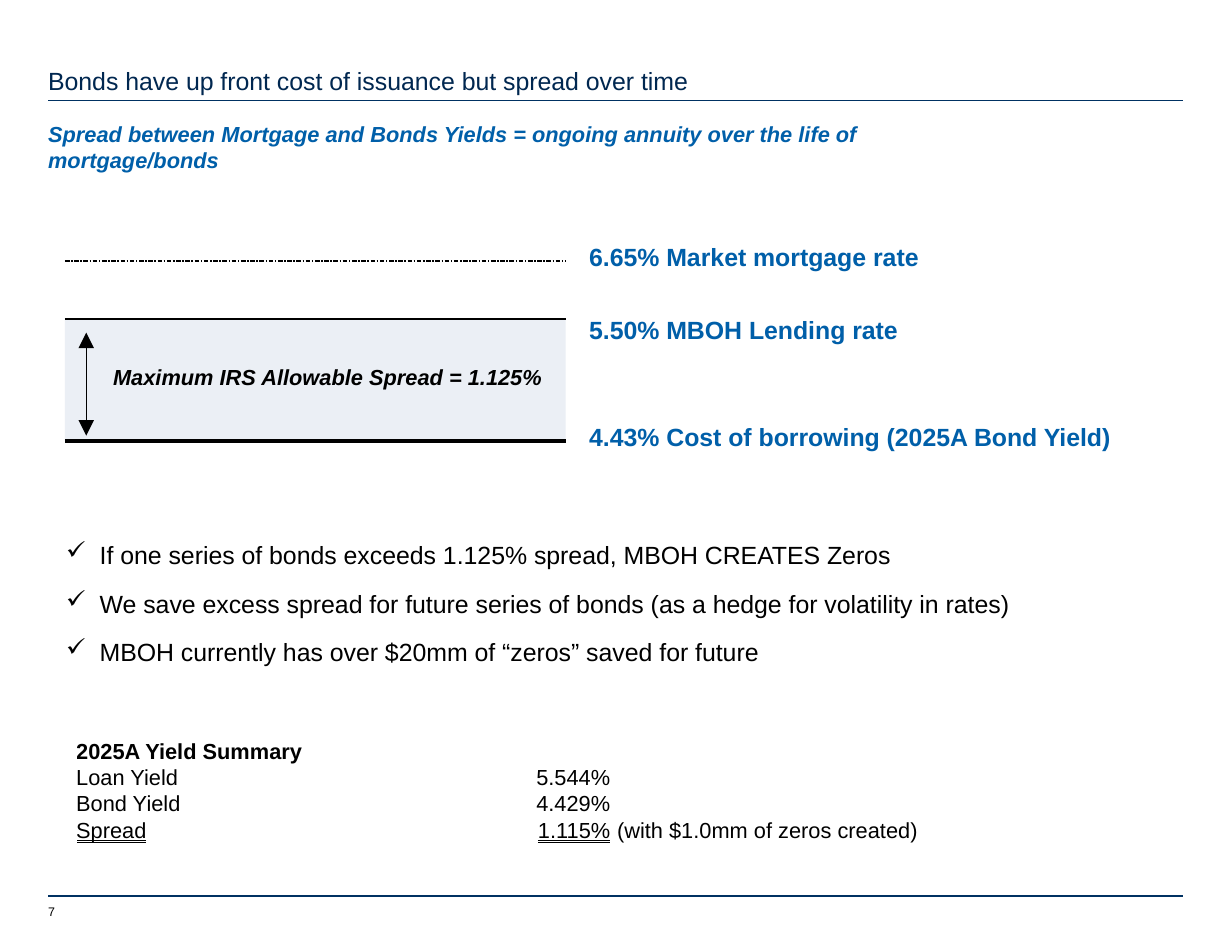
from dataclasses import dataclass

from lxml.etree import SubElement
from pptx import Presentation
from pptx.dml.color import RGBColor
from pptx.enum.shapes import MSO_CONNECTOR, MSO_SHAPE
from pptx.enum.text import MSO_ANCHOR, MSO_UNDERLINE, PP_ALIGN
from pptx.oxml.ns import qn
from pptx.util import Inches, Pt

COLUMNS, ROWS = 110, 85
UNIT = Inches(11) // COLUMNS


@dataclass(frozen=True)
class Theme:
    font: str = "Arial"
    title: str = "002750"
    accent: str = "005FA9"
    rule: str = "003162"
    ink: str = "000000"
    band: str = "EBEFF5"
    large: int = 16
    medium: int = 14
    small: int = 8


THEME = Theme()


@dataclass(frozen=True)
class Box:
    """A region measured in columns and rows of the page grid."""
    left: float
    top: float
    width: float
    height: float

    def inner(self, left, top, width, height):
        return Box(self.left + left, self.top + top, width, height)

    def emu(self):
        return [round(n * UNIT) for n in (self.left, self.top, self.width, self.height)]


def style(para, size, color=THEME.ink, bold=False, italic=False):
    font = para.font
    font.name, font.size = THEME.font, Pt(size)
    font.bold, font.italic = bold, italic
    font.color.rgb = RGBColor.from_string(color)


def add_frame(page, box):
    frame = page.shapes.add_textbox(*box.emu()).text_frame
    frame.word_wrap = True
    frame.margin_left = frame.margin_right = frame.margin_top = frame.margin_bottom = 0
    return frame


def add_label(page, box, text, size, color=THEME.ink, **weight):
    frame = add_frame(page, box)
    frame.vertical_anchor = MSO_ANCHOR.MIDDLE
    para = frame.paragraphs[0]
    para.text = text
    style(para, size, color, **weight)


def add_line(page, box, color=THEME.ink, width=0.75, dash=None, arrows=False):
    left, top, across, down = box.emu()
    line = page.shapes.add_connector(
        MSO_CONNECTOR.STRAIGHT, left, top, left + across, top + down)
    line.line.color.rgb = RGBColor.from_string(color)
    line.line.width = Pt(width)
    properties = line._element.spPr
    outline = properties.find(qn("a:ln"))
    if dash:
        SubElement(outline, qn("a:prstDash"), val=dash)
    if arrows:
        for end in ("a:headEnd", "a:tailEnd"):
            SubElement(outline, qn(end), type="triangle", w="lg", len="lg")
    SubElement(properties, qn("a:effectLst"))


def add_header(page, box):
    add_label(page, box.inner(0, 0, 88, 2.6),
              "Bonds have up front cost of issuance but spread over time",
              THEME.large, THEME.title)
    add_line(page, box.inner(0, 3.1, box.width, 0), THEME.rule)
    add_label(page, box.inner(0, 4.9, 86, 4.6),
              "Spread between Mortgage and Bonds Yields = ongoing annuity "
              "over the life of mortgage/bonds",
              THEME.medium, THEME.accent, bold=True, italic=True)


def add_rates(page, box):
    """Rate levels on the left, with the allowable spread as a band between two."""
    reach, lending, borrowing = 44.7, 5.15, 16.1
    band = page.shapes.add_shape(
        MSO_SHAPE.RECTANGLE,
        *box.inner(0, lending, reach, borrowing - lending).emu())
    band.shadow.inherit = False
    band.fill.solid()
    band.fill.fore_color.rgb = RGBColor.from_string(THEME.band)
    band.line.fill.background()

    for row, width, dash in ((0, 1, "sysDashDot"), (lending, 1.25, None),
                             (borrowing, 2.5, None)):
        add_line(page, box.inner(0, row, reach, 0), width=width, dash=dash)
    add_line(page, box.inner(1.9, 6.4, 0, 9.2), arrows=True)

    add_label(page, box.inner(4.3, 9.1, 40, 2.4), "Maximum IRS Allowable Spread = 1.125%",
              THEME.medium, bold=True, italic=True)
    for middle, text in ((-0.4, "6.65% Market mortgage rate"),
                         (6.1, "5.50% MBOH Lending rate"),
                         (15.7, "4.43% Cost of borrowing (2025A Bond Yield)")):
        add_label(page, box.inner(46.8, middle - 1.3, box.width - 46.8, 2.6), text,
                  THEME.large, THEME.accent, bold=True)


def add_points(page, box):
    frame = add_frame(page, box)
    points = ("If one series of bonds exceeds 1.125% spread, MBOH CREATES Zeros",
              "We save excess spread for future series of bonds "
              "(as a hedge for volatility in rates)",
              "MBOH currently has over $20mm of “zeros” saved for future")
    for index, text in enumerate(points):
        para = frame.add_paragraph() if index else frame.paragraphs[0]
        para.text = text
        properties = para._p.get_or_add_pPr()
        properties.set("marL", str(3 * UNIT))
        properties.set("indent", str(-3 * UNIT))
        para.space_before = Pt(12 if index else 0)
        SubElement(properties, qn("a:buChar"), char="✓")
        style(para, THEME.large)


def add_bottom_border(cell):
    properties = cell._tc.get_or_add_tcPr()
    border = SubElement(properties, qn("a:lnB"), w=str(Pt(0.5)))
    fill = SubElement(border, qn("a:solidFill"))
    SubElement(fill, qn("a:srgbClr"), val=THEME.ink)


def add_summary(page, box):
    rows = (("2025A Yield Summary", "", ""),
            ("Loan Yield", "5.544%", ""),
            ("Bond Yield", "4.429%", ""),
            ("Spread", "1.115%", "(with $1.0mm of zeros created)"))
    table = page.shapes.add_table(len(rows), 3, *box.emu()).table
    table.first_row = table.horz_banding = False
    for column, width in zip(table.columns, (30.5, 17.2, 27.7)):
        column.width = round(width * UNIT)
    for row_index, texts in enumerate(rows):
        for column_index, text in enumerate(texts):
            cell = table.cell(row_index, column_index)
            cell.margin_left = cell.margin_right = 0
            cell.margin_top = cell.margin_bottom = 0
            if column_index == 2:
                cell.margin_left = round(0.6 * UNIT)
            para = cell.text_frame.paragraphs[0]
            para.text = text
            para.line_spacing = Pt(16)
            para.alignment = PP_ALIGN.RIGHT if column_index == 1 else PP_ALIGN.LEFT
            style(para, THEME.medium, bold=row_index == 0)
            if row_index == 3 and column_index < 2:
                para.font.underline = MSO_UNDERLINE.DOUBLE_LINE
            if row_index == 2 and column_index < 2:
                add_bottom_border(cell)
            cell.fill.background()
    table.cell(0, 0).merge(table.cell(0, 2))


def add_footer(page, box):
    add_line(page, box.inner(0, 0, box.width, 0), THEME.rule)
    add_label(page, box.inner(0, 0.6, 2, 1.5), "7", THEME.small)


def main():
    deck = Presentation()
    deck.slide_width, deck.slide_height = COLUMNS * UNIT, ROWS * UNIT
    page = deck.slides.add_slide(deck.slide_layouts[6])
    add_header(page, Box(4.3, 5.9, 101.3, 9.5))
    add_rates(page, Box(5.8, 23.3, 97, 16.1))
    add_points(page, Box(5.9, 48.2, 84.6, 11.6))
    add_summary(page, Box(6.8, 66, 75.4, 9.4))
    add_footer(page, Box(4.3, 80, 101.3, 2.1))
    deck.save("out.pptx")


if __name__ == "__main__":
    main()
